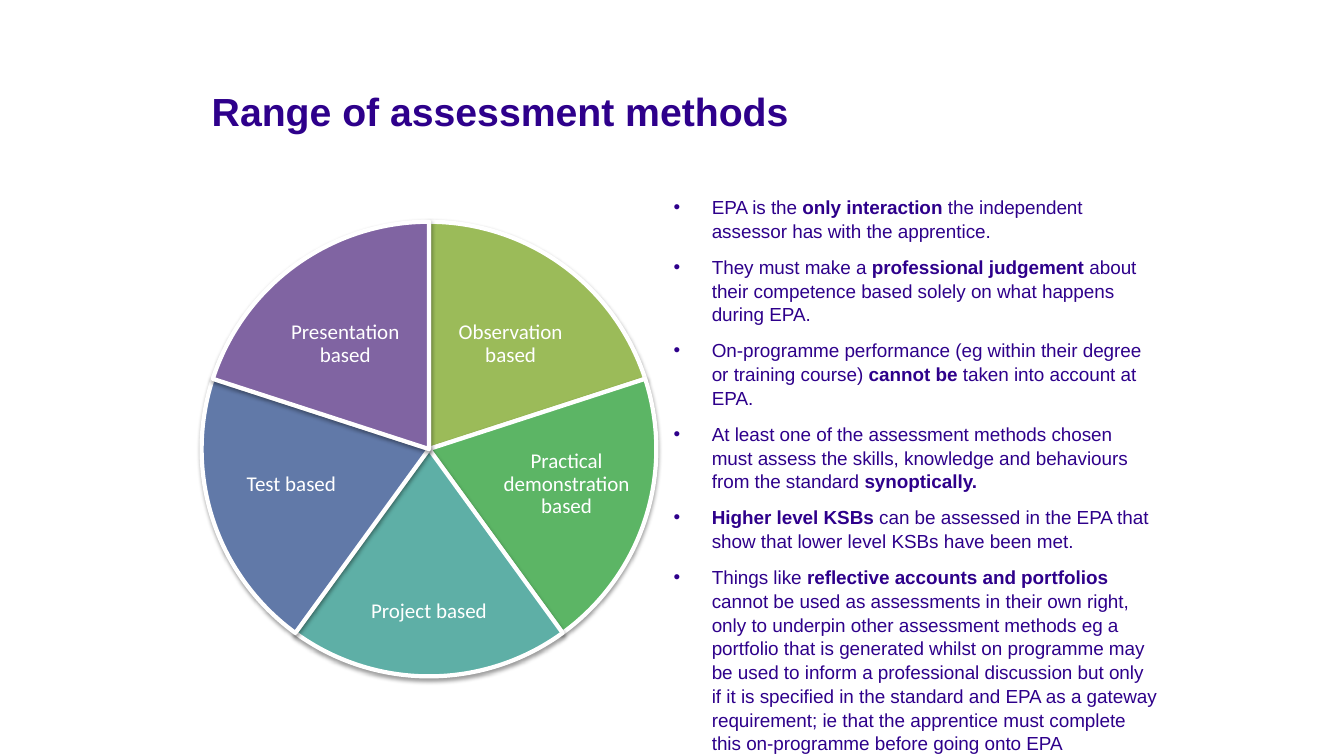
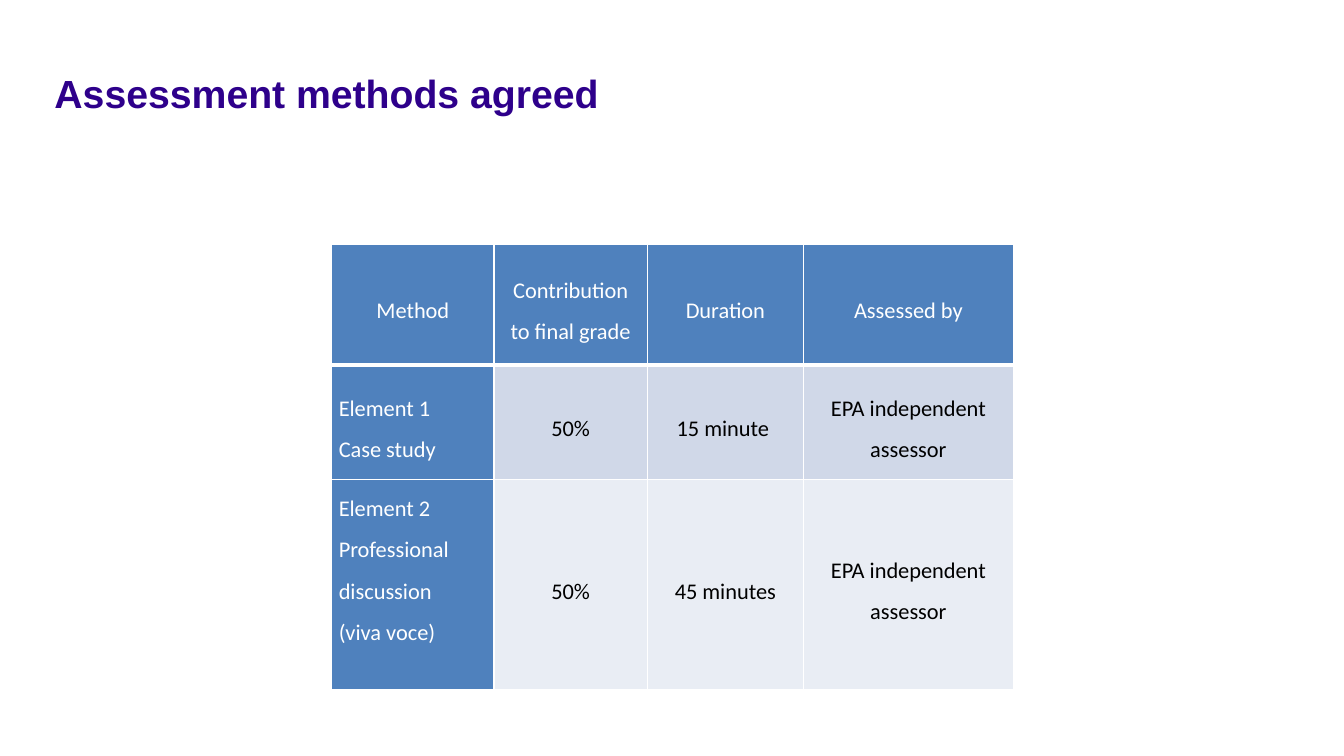
from lxml import etree
from pptx import Presentation
from pptx.dml.color import RGBColor
from pptx.enum.shapes import MSO_SHAPE
from pptx.enum.text import MSO_ANCHOR, MSO_AUTO_SIZE, PP_ALIGN
from pptx.oxml import parse_xml
from pptx.oxml.ns import nsdecls, qn
from pptx.util import Pt

PX = 9144  # 100 px to the inch
PURPLE = RGBColor(0x2E, 0x00, 0x8B)
WHITE = RGBColor(0xFF, 0xFF, 0xFF)
BLACK = RGBColor(0x00, 0x00, 0x00)
BLUE = RGBColor(0x4F, 0x81, 0xBD)
BANDS = [RGBColor(0xD0, 0xD8, 0xE8), RGBColor(0xE9, 0xED, 0xF4)]
OLIVE = RGBColor(0x9B, 0xBB, 0x59)
GREEN = RGBColor(0x5C, 0xB5, 0x65)
TEAL = RGBColor(0x5E, 0xAF, 0xA6)
STEEL = RGBColor(0x61, 0x79, 0xA8)
VIOLET = RGBColor(0x80, 0x64, 0xA2)

SHADOW = (f'<a:outerShdw {nsdecls("a")} blurRad="40000" dist="20000" dir="5400000" '
          'rotWithShape="0"><a:srgbClr val="000000"><a:alpha val="38000"/>'
          '</a:srgbClr></a:outerShdw>')


def add_run(p, text, size, color, name, bold=False):
    r = p.add_run()
    r.text = text
    r.font.size, r.font.name, r.font.bold = Pt(size), name, bold
    r.font.color.rgb = color


def place(sp, box, anchor):
    """Move a text shape to its px box and fix wrapping and anchor."""
    sp.left, sp.top, sp.width, sp.height = [v * PX for v in box]
    tf = sp.text_frame
    tf.word_wrap, tf.auto_size = True, MSO_AUTO_SIZE.NONE
    tf.vertical_anchor = anchor
    return tf


prs = Presentation()
prs.slide_width, prs.slide_height = 1333 * PX, 750 * PX

# Titles
slides = []
for layout, title, box in [
    (1, "Range of assessment methods", (200, 61, 817, 98)),
    (5, "Assessment methods agreed", (44, 30, 1200, 125)),
]:
    s = prs.slides.add_slide(prs.slide_layouts[layout])
    p = place(s.shapes.title, box, MSO_ANCHOR.MIDDLE).paragraphs[0]
    p.alignment = PP_ALIGN.LEFT
    add_run(p, title, 28, PURPLE, "Arial", True)
    slides.append(s)
methods, agreed = slides

# Slide 1: bullets, each a list of (text, bold) runs
bullets = [
    [("EPA is the ", False), ("only interaction ", True),
     ("the independent assessor has with the apprentice.", False)],
    [("They must make a ", False), ("professional judgement ", True),
     ("about their competence based solely on what happens during EPA.", False)],
    [("On-programme performance (eg within their degree or training course) ", False),
     ("cannot be ", True), ("taken into account at EPA.", False)],
    [("At least one of the assessment methods chosen must assess the skills, "
      "knowledge and behaviours from the standard ", False), ("synoptically.", True)],
    [("Higher level KSBs ", True),
     ("can be assessed in the EPA that show that lower level KSBs have been met.", False)],
    [("Things like ", False), ("reflective accounts and portfolios ", True),
     ("cannot be used as assessments in their own right, only to underpin other "
      "assessment methods eg a portfolio that is generated whilst on programme may be "
      "used to inform a professional discussion but only if it is specified in the "
      "standard and EPA as a gateway requirement; ie that the apprentice must complete "
      "this on-programme before going onto EPA", False)],
]
tf = place(methods.placeholders[1], (658, 188, 500, 562), MSO_ANCHOR.TOP)
for i, runs in enumerate(bullets):
    p = tf.add_paragraph() if i else tf.paragraphs[0]
    pPr = p._p.get_or_add_pPr()
    pPr.set("marL", str(38 * PX))
    pPr.set("indent", str(-38 * PX))
    p.line_spacing = 1.05
    p.space_before, p.space_after = Pt(2.7 if i else 0), Pt(6)
    for text, bold in runs:
        add_run(p, text, 13.5, PURPLE, "Arial", bold)

# Slide 1: five equal slices, clockwise from the top
slices = [
    ("Observation based", OLIVE, (430, 289, 153, 105)),
    ("Practical demonstration based", GREEN, (495, 424, 134, 113)),
    ("Project based", TEAL, (345, 558, 161, 97)),
    ("Test based", STEEL, (222, 424, 134, 113)),
    ("Presentation based", VIOLET, (266, 289, 153, 105)),
]
sweep = 360 / len(slices)
for i, (label, color, box) in enumerate(slices):
    sp = methods.shapes.add_shape(MSO_SHAPE.PIE, 200 * PX, 220 * PX, 451 * PX, 451 * PX)
    start = (270 + i * sweep) % 360
    # Angles are stored in 60000ths of a degree, adjustments in 100000ths
    sp.adjustments[0] = start * 0.6
    sp.adjustments[1] = (start + sweep) % 360 * 0.6
    sp.fill.solid()
    sp.fill.fore_color.rgb = color
    sp.line.color.rgb, sp.line.width = WHITE, Pt(3)
    sp.shadow.inherit = False
    sp._element.spPr.find(qn("a:effectLst")).append(parse_xml(SHADOW))

    tb = methods.shapes.add_textbox(0, 0, PX, PX)
    tf = place(tb, box, MSO_ANCHOR.MIDDLE)
    tf.margin_left = tf.margin_right = tf.margin_top = tf.margin_bottom = 2 * PX
    p = tf.paragraphs[0]
    p.alignment, p.line_spacing = PP_ALIGN.CENTER, 0.9
    add_run(p, label, 15, WHITE, "Calibri")

# Slide 2: table, one string per paragraph
rows = [
    [["Method"], ["Contribution to final grade"], ["Duration"], ["Assessed by"]],
    [["Element 1", "Case study"], ["50%"], ["15 minute "], ["EPA independent assessor"]],
    [["Element 2", "Professional discussion", "(viva voce)"], ["50%"], ["45 minutes"],
     ["EPA independent assessor"]],
]
widths, heights = [161, 152, 155, 208], [120, 114, 208]
table = agreed.shapes.add_table(len(rows), len(widths), 329 * PX, 242 * PX,
                                sum(widths) * PX, sum(heights) * PX).table
for col, width in zip(table.columns, widths):
    col.width = width * PX
for row, height in zip(table.rows, heights):
    row.height = height * PX

for i, row in enumerate(rows):
    for j, lines in enumerate(row):
        cell = table.cell(i, j)
        heading = i == 0 or j == 0
        tcPr = cell._tc.get_or_add_tcPr()
        for side in ("lnL", "lnR", "lnT", "lnB"):
            width = Pt(3 if i == 0 and side == "lnB" else 1)
            ln = etree.SubElement(tcPr, qn(f"a:{side}"), w=str(width))
            fill = etree.SubElement(ln, qn("a:solidFill"))
            etree.SubElement(fill, qn("a:srgbClr"), val=str(WHITE))
        cell.fill.solid()
        cell.fill.fore_color.rgb = BLUE if heading else BANDS[i - 1]
        cell.vertical_anchor = MSO_ANCHOR.MIDDLE
        cell.margin_left = cell.margin_right = 7 * PX
        cell.margin_top = 0
        cell.margin_bottom = 41 * PX if len(lines) > 2 else 0
        for k, line in enumerate(lines):
            tf = cell.text_frame
            p = tf.add_paragraph() if k else tf.paragraphs[0]
            p.alignment = PP_ALIGN.LEFT if i and j == 0 else PP_ALIGN.CENTER
            p.line_spacing = 1.5
            add_run(p, line, 16, WHITE if heading else BLACK, "Calibri")

prs.save("out.pptx")
